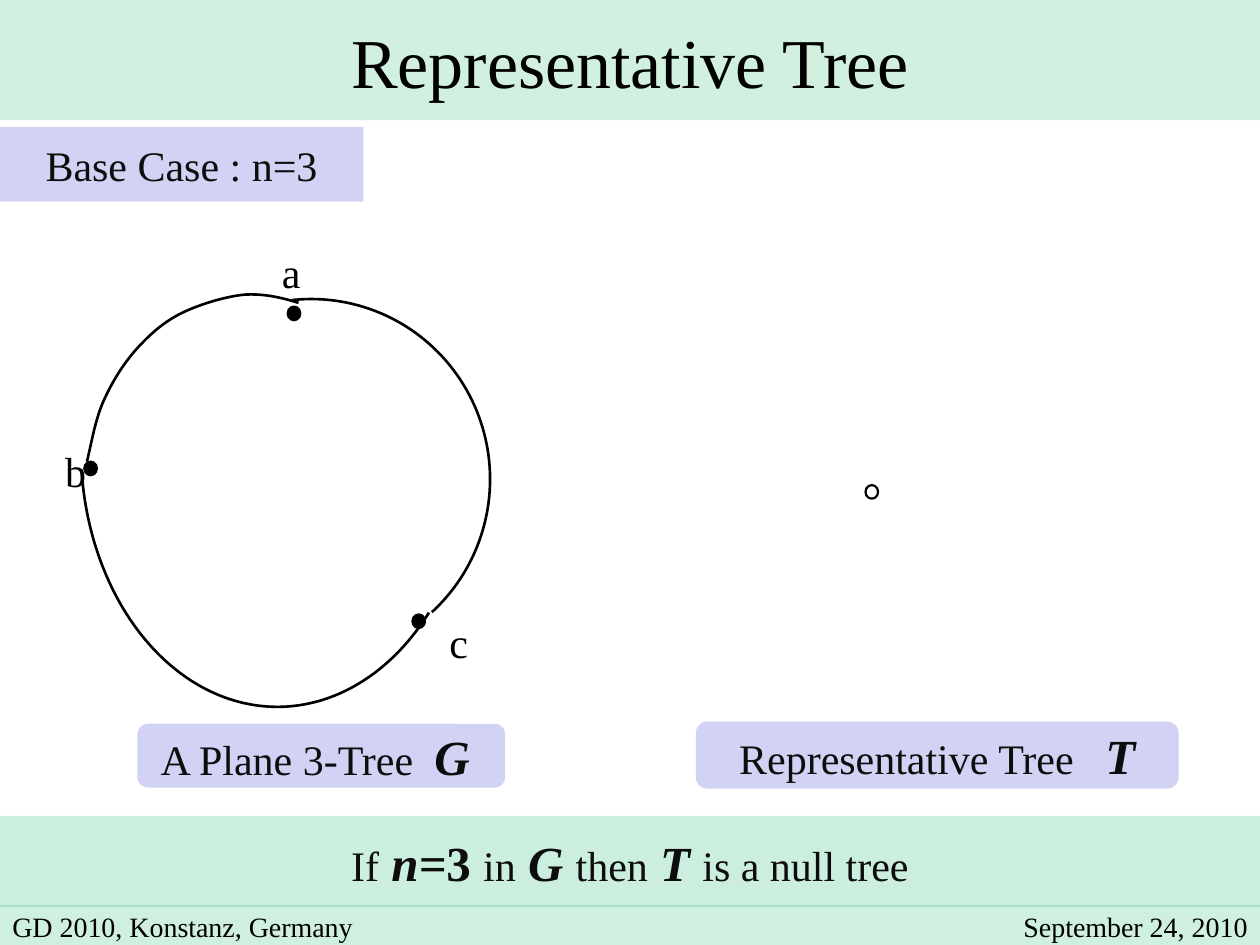
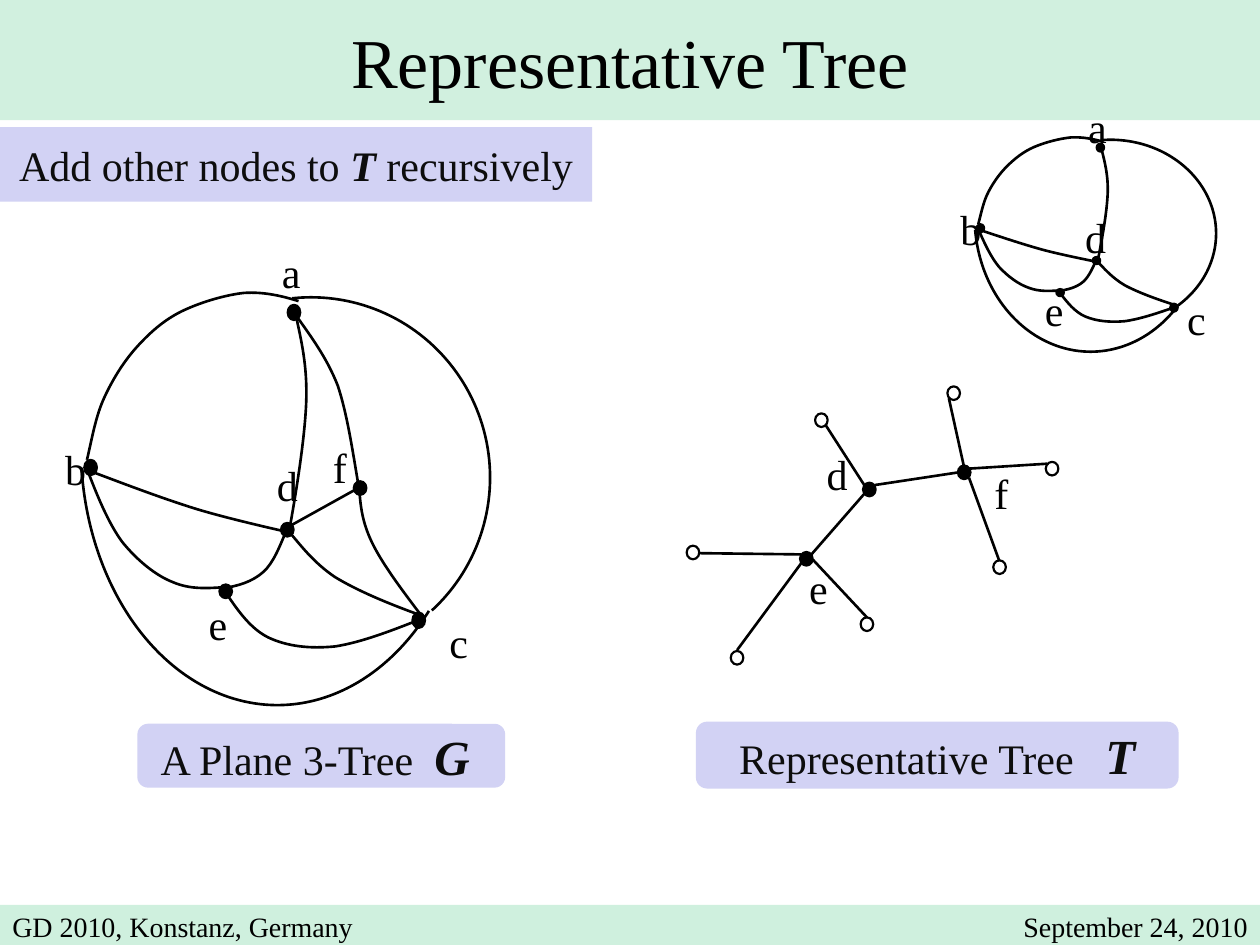
from dataclasses import dataclass
from typing import NamedTuple

from lxml import etree
from pptx import Presentation
from pptx import util as u
from pptx.dml.color import RGBColor
from pptx.enum import shapes as kinds, text as t
from pptx.oxml import ns

Point = tuple[float, float]


@dataclass(frozen=True)
class Theme:
    font: str = "Times New Roman"
    black: str = "000000"
    white: str = "FFFFFF"
    ink: str = "0D0D0D"
    green: str = "00B050"
    mint: str = "CCEEDF"
    lilac: str = "D2D2F4"
    title: int = 40
    symbol: int = 28
    body: int = 24
    footer: int = 16
    edge: float = 1.5
    outline: float = 1.25


THEME = Theme()


class Box(NamedTuple):
    x: float
    y: float
    w: float
    h: float


@dataclass(frozen=True)
class Run:
    text: str
    size: int = THEME.body
    bold: bool = False
    italic: bool = False
    spacing: int = 0


@dataclass(frozen=True)
class Arc:
    box: Box
    start: float
    end: float


@dataclass(frozen=True)
class View:
    dx: float = 0
    dy: float = 0
    sx: float = 1
    sy: float = 1

    def point(self, p: Point) -> Point:
        return self.dx + self.sx * p[0], self.dy + self.sy * p[1]

    def box(self, b: Box) -> Box:
        return Box(*self.point((b.x, b.y)), b.w * self.sx, b.h * self.sy)


NODE_W, NODE_H, LABEL_SIDE = 7.2, 7.8, 13.7

VERTICES: dict[str, Point] = {
    "a": (164.4, 174.2), "b": (48.2, 262.8), "c": (235.7, 350.1),
    "d": (160.6, 298.8), "e": (125.4, 334), "f": (202.2, 275),
}
VERTEX_LABELS: dict[str, Point] = {
    "a": (154.5, 148.3), "b": (30.6, 261), "c": (250.2, 360),
    "d": (151.6, 270), "e": (112.6, 349.5), "f": (183.6, 259.9),
}
OUTER_ARCS = (
    Arc(Box(75.6, 169.9, 204.5, 205.9), 158.395, 28.654),
    Arc(Box(46.2, 107, 224.6, 295.9), 28.423, 104.213),
)
CURVES: dict[str, list[Point]] = {
    "ab": [(49.7, 262.8), (52.6, 250.6), (54.7, 237.6), (59.8, 226.8),
           (64.8, 216), (71.3, 205.9), (78.5, 198),
           (85.7, 190.1), (93.6, 183), (103.7, 178),
           (114.3, 172.8), (128.9, 168.5), (139.7, 167.4),
           (151.2, 166.7), (161.3, 169.2), (170.6, 172.1)],
    "ad": [(169.2, 180.7), (172.1, 194.4), (175.7, 208.8), (175, 229.7),
           (174.2, 249.8), (169.9, 277.9), (164.9, 305.3)],
    "bd": [(51.8, 269.3), (72.7, 277.2), (93.6, 285.1), (112.3, 290.9),
           (131, 296.6), (163.4, 303.8), (163.4, 303.8)],
    "cd": [(163.4, 301.7), (171.4, 311), (178.6, 321.1), (191.5, 329.8),
           (204.5, 337.7), (221.8, 344.9), (239.8, 351.4)],
    "de": [(127.4, 336.2), (136.1, 334.8), (144, 332.6), (150.5, 326.9),
           (156.2, 321.8), (159.8, 312.5), (163.4, 303.8)],
    "be": [(49.7, 267.8), (55.4, 283), (61.9, 298.8), (69.8, 309.6),
           (78.5, 320.4), (89.3, 329), (98.6, 332.6),
           (108.7, 337), (118.8, 336.2), (128.9, 335.5)],
    "ce": [(128.9, 338.4), (136.1, 349.2), (143.3, 359.3), (153.4, 364.3),
           (164.2, 369.4), (177.1, 370.8), (191.5, 369.4),
           (205.9, 367.2), (223.2, 360.7), (241.2, 353.5)],
    "af": [(168.5, 179.3), (177.1, 191.5), (186.5, 203.8), (193, 220.3),
           (198.7, 237.6), (201.6, 258.5), (205.2, 279.4)],
    "cf": [(205.2, 277.9), (205.9, 288), (206.6, 297.4), (212.4, 309.6),
           (218.2, 321.8), (229, 336.2), (240.5, 351.4)],
}
EDGE_DF: tuple[Point, Point] = ((164.9, 301), (203.8, 279.4))

TREE_EDGES: list[tuple[Point, Point]] = [
    ((471.6, 242.6), (493.9, 277.2)), ((493.9, 282.2), (463.7, 316.8)),
    ((547.2, 270), (499.7, 277.2)), ((495.4, 352.8), (464.4, 319.7)),
    ((457.9, 316.8), (399.6, 316.1)), ((457.9, 321.8), (421.2, 371.5)),
    ((598.3, 265), (553.7, 267.8)), ((542.2, 227.5), (550.8, 266.4)),
    ((553.7, 272.9), (571, 320.4)),
]
TREE_INNER: list[Point] = [(493.2, 275.8), (457.2, 315.4), (547.4, 266)]
TREE_LEAVES: list[Point] = [
    (465.8, 236.2), (491.8, 352.8), (392.4, 311.8), (417.6, 372),
    (541.4, 220.8), (567.6, 320.2), (597.6, 263.9),
]
TREE_LABELS: dict[str, Point] = {"d": (465.8, 263.8), "e": (455.8, 329), "f": (561.6, 274.6)}


def emu(values) -> list[int]:
    return [u.Pt(v) for v in values]


def write(shape, runs: list[Run], *, color: str = THEME.ink,
          align=t.PP_ALIGN.CENTER, wrap: bool = True) -> None:
    frame = shape.text_frame
    frame.word_wrap = wrap
    frame.vertical_anchor = t.MSO_ANCHOR.MIDDLE
    paragraph = frame.paragraphs[0]
    paragraph.alignment = align
    for part in runs:
        run = paragraph.add_run()
        run.text = part.text
        font = run.font
        font.name, font.size = THEME.font, u.Pt(part.size)
        font.bold, font.italic = part.bold, part.italic
        font.color.rgb = RGBColor.from_string(color)
        if part.spacing:
            run._r.get_or_add_rPr().set("spc", str(part.spacing * 100))


def stroke(line, width: float) -> None:
    line.color.rgb = RGBColor.from_string(THEME.black)
    line.width = u.Pt(width)


def solid(slide, kind, box: Box, fill: str, *, alpha: int = 100,
          corner: float | None = None, outline: float = 0):
    shape = slide.shapes.add_shape(kind, *emu(box))
    shape.shadow.inherit = False
    shape.fill.solid()
    shape.fill.fore_color.rgb = RGBColor.from_string(fill)
    if alpha < 100:
        tint = shape._element.spPr.find(".//" + ns.qn("a:srgbClr"))
        etree.SubElement(tint, ns.qn("a:alpha"), val=str(alpha * 1000))
    if corner is not None:
        shape.adjustments[0] = corner
    if outline:
        stroke(shape.line, outline)
    else:
        shape.line.fill.background()
    return shape


def draw_text(slide, box: Box, runs: list[Run], align=t.PP_ALIGN.CENTER):
    textbox = slide.shapes.add_textbox(*emu(box))
    write(textbox, runs, color=THEME.black, align=align)
    return textbox


def draw_label(slide, name: str, at: Point, view: View = View()) -> None:
    draw_text(slide, view.box(Box(*at, LABEL_SIDE, LABEL_SIDE)), [Run(name)])


def draw_node(slide, at: Point, fill: str = THEME.black, view: View = View(),
              stretch: float = 0) -> None:
    solid(slide, kinds.MSO_SHAPE.OVAL, view.box(Box(*at, NODE_W, NODE_H + stretch)), fill,
          outline=THEME.outline)


def draw_line(slide, start: Point, end: Point) -> None:
    line = slide.shapes.add_connector(kinds.MSO_CONNECTOR.STRAIGHT, *emu(start + end))
    stroke(line.line, THEME.edge)
    etree.SubElement(line._element.spPr, ns.qn("a:effectLst"))


def draw_arc(slide, arc: Arc, view: View) -> None:
    shape = slide.shapes.add_shape(kinds.MSO_SHAPE.ARC, *emu(view.box(arc.box)))
    shape.shadow.inherit = False
    shape.adjustments[0], shape.adjustments[1] = arc.start, arc.end
    shape.fill.background()
    stroke(shape.line, THEME.edge)


def draw_curve(slide, points: list[Point], view: View) -> None:
    first, *rest = [emu(view.point(p)) for p in points]
    builder = slide.shapes.build_freeform(*first)
    builder.add_line_segments(rest, close=False)
    shape = builder.convert_to_shape()
    shape.shadow.inherit = False
    shape.fill.background()
    stroke(shape.line, THEME.edge)
    segments = list(shape._element.spPr.iter(ns.qn("a:lnTo")))
    outline = segments[0].getparent()
    for i in range(0, len(segments), 3):
        bezier = etree.SubElement(outline, ns.qn("a:cubicBezTo"))
        for segment in segments[i:i + 3]:
            bezier.append(segment[0])
            outline.remove(segment)


def draw_graph(slide, names: str, view: View = View(), *, outer_stretch: float = 0,
               fixed_labels: str = "") -> None:
    for ends, points in CURVES.items():
        if set(ends) <= set(names):
            draw_curve(slide, points, view)
    for arc in OUTER_ARCS:
        draw_arc(slide, arc, view)
    if {"d", "f"} <= set(names):
        draw_line(slide, *map(view.point, EDGE_DF))
    for name in names:
        draw_node(slide, VERTICES[name], view=view,
                  stretch=outer_stretch if name in "abc" else 0)
        draw_label(slide, name, VERTEX_LABELS[name], View() if name in fixed_labels else view)


def draw_tree(slide) -> None:
    for start, end in TREE_EDGES:
        draw_line(slide, start, end)
    for at in TREE_INNER:
        draw_node(slide, at)
    for at in TREE_LEAVES:
        draw_node(slide, at, THEME.white)
    for name, at in TREE_LABELS.items():
        draw_label(slide, name, at)


def symbol(text: str, italic: bool = True) -> Run:
    return Run(text, THEME.symbol, bold=True, italic=italic)


def draw_frame(slide, heading: list[Run], heading_width: float) -> None:
    rect, rounded = kinds.MSO_SHAPE.RECTANGLE, kinds.MSO_SHAPE.ROUNDED_RECTANGLE
    title = solid(slide, rect, Box(0, 0, 720, 68.7), THEME.green, alpha=18)
    write(title, [Run("Representative Tree", THEME.title)], color=THEME.black, wrap=False)
    banner = solid(slide, rounded, Box(0, 72.7, heading_width, 42.5), THEME.lilac, corner=0)
    write(banner, heading)
    graph_caption = solid(slide, rounded, Box(78.5, 413.6, 210.2, 36.5), THEME.lilac)
    write(graph_caption, [Run("A Plane 3-Tree"), Run(" ", spacing=6), symbol("G ")])
    tree_caption = solid(slide, rounded, Box(397.7, 412.4, 275.8, 38.2), THEME.lilac)
    write(tree_caption, [Run("Representative Tree"), Run(" ", spacing=12), symbol("T")])


def draw_footer(slide) -> None:
    solid(slide, kinds.MSO_SHAPE.RECTANGLE, Box(0, 517, 720, 23), THEME.green, alpha=19)
    for x, width, text, align in (
        (0, 224, "GD 2010, Konstanz, Germany", t.PP_ALIGN.LEFT),
        (559.4, 160.6, "September 24, 2010", t.PP_ALIGN.RIGHT),
    ):
        note = draw_text(slide, Box(x, 519.2, width, 20.8), [Run(text, THEME.footer)], align)
        note.text_frame.margin_top = note.text_frame.margin_bottom = 0


def base_case(slide) -> None:
    draw_frame(slide, [Run("Base Case : n=3")], 207.6)
    draw_graph(slide, "abc", View(dy=1), fixed_labels="ac")
    draw_node(slide, (494.6, 277.2), THEME.white)
    statement = solid(slide, kinds.MSO_SHAPE.ROUNDED_RECTANGLE, Box(0, 466.3, 720, 52),
                      THEME.mint, corner=0)
    write(statement, [Run("If"), symbol(" n="), symbol("3 ", italic=False), Run("in"),
                      symbol(" G "), Run("then"), symbol(" T "), Run("is a null tree")])
    draw_footer(slide)


def recursion(slide) -> None:
    draw_graph(slide, "abcde", View(529.7, -8.5, 0.59, 0.52), outer_stretch=0.9)
    heading = [Run("Add other nodes to "), Run("T", bold=True, italic=True), Run(" recursively")]
    draw_frame(slide, heading, 338.4)
    draw_graph(slide, "abcdef", outer_stretch=0.9)
    draw_tree(slide)
    draw_footer(slide)


def main() -> None:
    deck = Presentation()
    deck.slide_width, deck.slide_height = u.Pt(720), u.Pt(540)
    for build in (base_case, recursion):
        build(deck.slides.add_slide(deck.slide_layouts[6]))
    deck.save("out.pptx")


if __name__ == "__main__":
    main()
